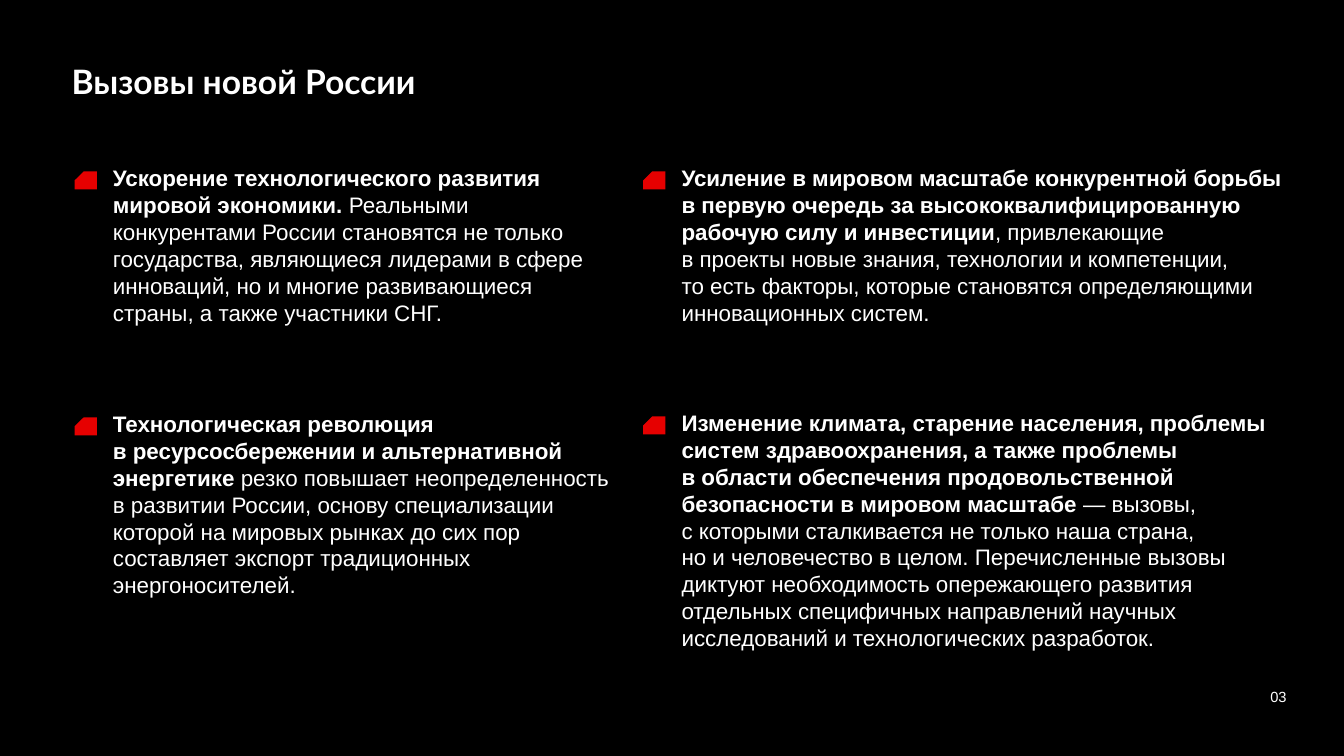
import copy
from dataclasses import dataclass

import pptx
import pptx.dml.color
import pptx.enum.shapes
import pptx.enum.text
import pptx.oxml
import pptx.oxml.ns
import pptx.util
from pptx.util import Inches

BLACK = pptx.dml.color.RGBColor(0x00, 0x00, 0x00)
WHITE = pptx.dml.color.RGBColor(0xFF, 0xFF, 0xFF)
RED = pptx.dml.color.RGBColor(0xE6, 0x00, 0x00)
COMPARISON_LAYOUT = 4
MARKER_OFFSET_X = -0.28
MARKER_OFFSET_Y = 0.12


@dataclass(frozen=True)
class Challenge:
    left: float
    top: float
    width: float
    height: float
    thesis: str
    details: str


CHALLENGES = [
    Challenge(
        1.02, 1.58, 4.91, 1.74,
        "Ускорение технологического развития мировой экономики. ",
        "Реальными конкурентами России становятся не только государства, "
        "являющиеся лидерами в сфере инноваций, но и многие развивающиеся "
        "страны, а также участники СНГ.",
    ),
    Challenge(
        1.02, 4.02, 5.23, 1.89,
        "Технологическая революция \n"
        "в ресурсосбережении и альтернативной энергетике",
        " резко повышает неопределенность в развитии России, основу "
        "специализации которой на мировых рынках до сих пор составляет "
        "экспорт традиционных энергоносителей.",
    ),
    Challenge(
        6.66, 1.58, 6.2, 2.11,
        "Усиление в мировом масштабе конкурентной борьбы в первую очередь "
        "за высококвалифицированную рабочую силу и инвестиции",
        ", привлекающие \n"
        "в проекты новые знания, технологии и компетенции, \n"
        "то есть факторы, которые становятся определяющими "
        "инновационных систем.",
    ),
    Challenge(
        6.66, 4.01, 6.2, 2.65,
        "Изменение климата, старение населения, проблемы систем "
        "здравоохранения, а также проблемы \n"
        "в области обеспечения продовольственной безопасности "
        "в мировом масштабе ",
        "— вызовы, \n"
        "с которыми сталкивается не только наша страна, \n"
        "но и человечество в целом. Перечисленные вызовы диктуют "
        "необходимость опережающего развития отдельных специфичных "
        "направлений научных исследований и технологических разработок.",
    ),
]


def place(shape, left: float, top: float, width: float, height: float) -> None:
    shape.left, shape.top = Inches(left), Inches(top)
    shape.width, shape.height = Inches(width), Inches(height)


def prepare_frame(shape, anchor, alignment):
    frame = shape.text_frame
    frame.word_wrap = True
    frame.auto_size = pptx.enum.text.MSO_AUTO_SIZE.NONE
    frame.vertical_anchor = anchor
    paragraph = frame.paragraphs[0]
    paragraph.alignment = alignment
    return paragraph


def add_text(paragraph, text: str, size: float, bold: bool, font: str = "Arial") -> None:
    for index, line in enumerate(text.split("\n")):
        if index:
            paragraph.add_line_break()
            line_break = paragraph._p.findall(pptx.oxml.ns.qn("a:br"))[-1]
            line_break.insert(0, copy.deepcopy(run._r.rPr))
        run = paragraph.add_run()
        run.text = line
        run.font.name = font
        run.font.size = pptx.util.Pt(size)
        run.font.bold = bold
        run.font.color.rgb = WHITE


def remove_bullet(paragraph) -> None:
    properties = paragraph._p.get_or_add_pPr()
    properties.set("marL", "0")
    properties.set("indent", "0")
    properties.append(pptx.oxml.parse_xml(f"<a:buNone {pptx.oxml.ns.nsdecls('a')}/>"))


def add_marker(slide, challenge: Challenge) -> None:
    marker = slide.shapes.add_shape(
        pptx.enum.shapes.MSO_SHAPE.SNIP_1_RECTANGLE,
        Inches(challenge.left + MARKER_OFFSET_X),
        Inches(challenge.top + MARKER_OFFSET_Y),
        Inches(0.22), Inches(0.18),
    )
    marker.adjustments[0] = 0.5
    marker._element.spPr.get_or_add_xfrm().set("flipH", "1")
    marker.shadow.inherit = False
    marker.fill.solid()
    marker.fill.fore_color.rgb = RED
    marker.line.fill.background()


def add_challenge(slide, body, challenge: Challenge) -> None:
    place(body, challenge.left, challenge.top, challenge.width, challenge.height)
    paragraph = prepare_frame(
        body, pptx.enum.text.MSO_ANCHOR.TOP, pptx.enum.text.PP_ALIGN.LEFT
    )
    paragraph.space_before = pptx.util.Pt(10)
    remove_bullet(paragraph)
    add_text(paragraph, challenge.thesis, 16, True)
    add_text(paragraph, challenge.details, 16, False)
    add_marker(slide, challenge)


def main() -> None:
    presentation = pptx.Presentation()
    presentation.slide_width = Inches(13.33)
    presentation.slide_height = Inches(7.5)
    slide = presentation.slides.add_slide(presentation.slide_layouts[COMPARISON_LAYOUT])
    slide.background.fill.solid()
    slide.background.fill.fore_color.rgb = BLACK

    heading = slide.shapes.title
    place(heading, 0.61, 0.43, 6.07, 0.8)
    heading_line = prepare_frame(
        heading, pptx.enum.text.MSO_ANCHOR.MIDDLE, pptx.enum.text.PP_ALIGN.LEFT
    )
    heading_line.line_spacing = 0.9
    add_text(heading_line, "Вызовы новой России", 24, True, "Lato")

    bodies = list(slide.placeholders)[1:]
    for body, challenge in zip(bodies, CHALLENGES):
        add_challenge(slide, body, challenge)

    page_number = slide.shapes.add_textbox(
        Inches(11.99), Inches(6.71), Inches(0.87), Inches(0.4)
    )
    page_line = prepare_frame(
        page_number, pptx.enum.text.MSO_ANCHOR.MIDDLE, pptx.enum.text.PP_ALIGN.RIGHT
    )
    add_text(page_line, "03", 10.5, False)

    presentation.save("out.pptx")


if __name__ == "__main__":
    main()
